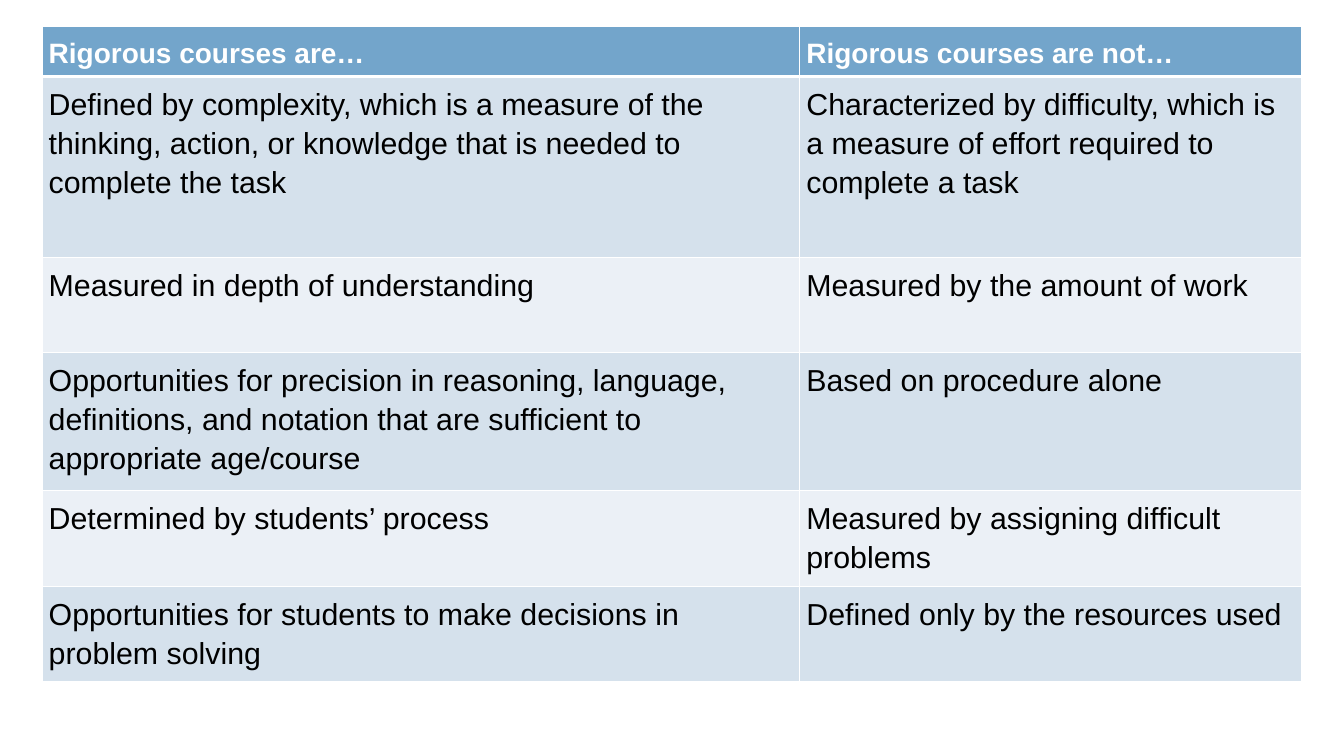
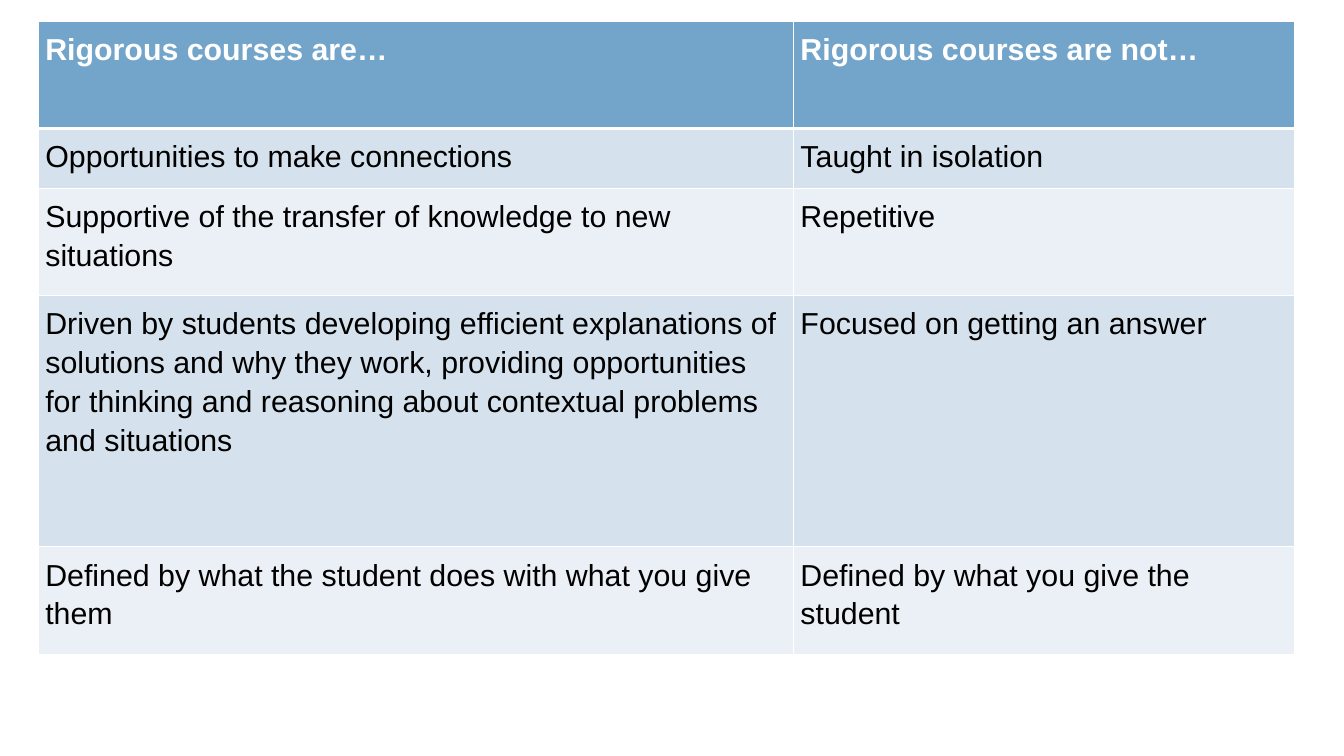
from dataclasses import dataclass

from lxml.etree import SubElement
from pptx import Presentation
from pptx.dml.color import RGBColor
from pptx.oxml.ns import qn
from pptx.util import Inches, Pt

WIDE, HIGH = 16, 9
FONT = "Arial"
WHITE, BLACK, BLUE = "FFFFFF", "000000", "73A5CB"
BANDS = ("D5E1EC", "EBF0F6")
HEAD = ("Rigorous courses are…", "Rigorous courses are not…")
INSET = 0.08
BODY = 26


@dataclass(frozen=True)
class Row:
    high: float
    left: str
    right: str


@dataclass(frozen=True)
class Grid:
    x: float
    y: float
    cols: tuple[float, float]
    size: int
    rows: tuple[Row, ...]


GRIDS = (
    Grid(0.5, 0.32, (9.02, 5.98), 24, (
        Row(0.59, *HEAD),
        Row(2.15,
            "Defined by complexity, which is a measure of the thinking, action, "
            "or knowledge that is needed to complete the task",
            "Characterized by difficulty, which is a measure of effort required "
            "to complete a task"),
        Row(1.14, "Measured in depth of understanding",
            "Measured by the amount of work"),
        Row(1.64,
            "Opportunities for precision in reasoning, language, definitions, "
            "and notation that are sufficient to appropriate age/course",
            "Based on procedure alone"),
        Row(1.14, "Determined by students’ process",
            "Measured by assigning difficult problems"),
        Row(1.14,
            "Opportunities for students to make decisions in problem solving",
            "Defined only by the resources used"),
    )),
    Grid(0.46, 0.25, (8.99, 5.96), BODY, (
        Row(1.28, *HEAD),
        Row(0.71, "Opportunities to make connections", "Taught in isolation"),
        Row(1.28, "Supportive of the transfer of knowledge to new situations",
            "Repetitive"),
        Row(2.99,
            "Driven by students developing efficient explanations of solutions "
            "and why they work, providing opportunities for thinking and "
            "reasoning about contextual problems and situations",
            "Focused on getting an answer"),
        Row(1.28, "Defined by what the student does with what you give them",
            "Defined by what you give the student"),
    )),
)


def tint(code: str) -> RGBColor:
    return RGBColor.from_string(code)


def edge(cell, base: int) -> None:
    props = cell._tc.get_or_add_tcPr()
    for side, width in (("L", 1), ("R", 1), ("T", 1), ("B", base)):
        line = SubElement(props, qn(f"a:ln{side}"), w=str(Pt(width)))
        fill = SubElement(line, qn("a:solidFill"))
        SubElement(fill, qn("a:srgbClr"), val=WHITE)


def write(cell, text: str, size: int, ink: str, bold: bool) -> None:
    cell.margin_left = cell.margin_right = Inches(INSET)
    cell.margin_top = cell.margin_bottom = Inches(INSET)
    para = cell.text_frame.paragraphs[0]
    para.line_spacing = 1.15
    run = para.add_run()
    run.text = text
    font = run.font
    font.name, font.size, font.bold = FONT, Pt(size), bold
    font.color.rgb = tint(ink)


def draw(slide, grid: Grid) -> None:
    high = sum(row.high for row in grid.rows)
    frame = slide.shapes.add_table(
        len(grid.rows), len(grid.cols), Inches(grid.x), Inches(grid.y),
        Inches(sum(grid.cols)), Inches(high))
    table = frame.table
    for col, width in zip(table.columns, grid.cols):
        col.width = Inches(width)
    for num, row in enumerate(grid.rows):
        table.rows[num].height = Inches(row.high)
        top = num == 0
        back = BLUE if top else BANDS[(num - 1) % 2]
        for col, text in enumerate((row.left, row.right)):
            cell = table.cell(num, col)
            edge(cell, 3 if top else 1)
            cell.fill.solid()
            cell.fill.fore_color.rgb = tint(back)
            write(cell, text, grid.size if top else BODY,
                  WHITE if top else BLACK, top)


def main() -> None:
    deck = Presentation()
    deck.slide_width, deck.slide_height = Inches(WIDE), Inches(HIGH)
    blank = deck.slide_layouts[6]
    for grid in GRIDS:
        draw(deck.slides.add_slide(blank), grid)
    deck.save("out.pptx")


if __name__ == "__main__":
    main()
